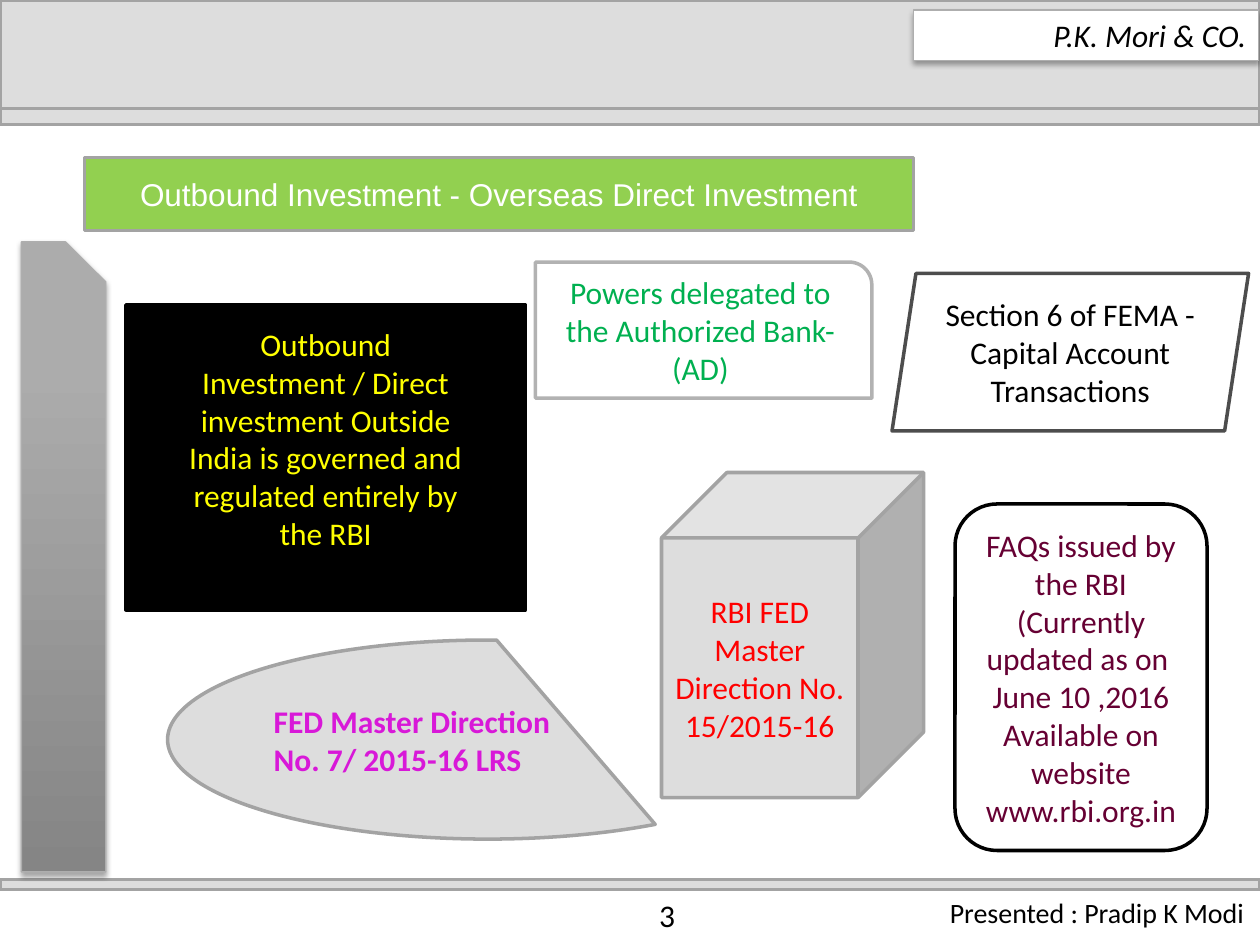
from lxml.etree import SubElement
from pptx import Presentation
from pptx.dml.color import RGBColor
from pptx.enum.shapes import MSO_SHAPE
from pptx.enum.text import MSO_ANCHOR, PP_ALIGN
from pptx.oxml import parse_xml
from pptx.oxml.ns import nsdecls, qn
from pptx.util import Inches, Pt

BLACK = RGBColor(0x00, 0x00, 0x00)
WHITE = RGBColor(0xFF, 0xFF, 0xFF)
PANEL = RGBColor(0xDD, 0xDD, 0xDD)
BORDER = RGBColor(0xA3, 0xA3, 0xA3)
SILVER = RGBColor(0xB2, 0xB2, 0xB2)
HAIRLINE = RGBColor(0xAE, 0xAE, 0xAE)
CHARCOAL = RGBColor(0x4D, 0x4D, 0x4D)
BAR_DARK = RGBColor(0x85, 0x85, 0x85)
BAR_LIGHT = RGBColor(0xAC, 0xAC, 0xAC)
LIME = RGBColor(0x92, 0xD0, 0x50)
GREEN = RGBColor(0x00, 0xB0, 0x50)
RED = RGBColor(0xFF, 0x00, 0x00)
YELLOW = RGBColor(0xFF, 0xFF, 0x00)
MAROON = RGBColor(0x66, 0x00, 0x33)
MAGENTA = RGBColor(0xD8, 0x18, 0xD8)
PURPLE = RGBColor(0x70, 0x30, 0xA0)


def paint(sp, fill, line, width=2):
    if fill is not None:
        sp.fill.solid()
        sp.fill.fore_color.rgb = fill
    sp.line.color.rgb = line
    sp.line.width = Pt(width)


def write(sp, text, color, size=18, font="Calibri", align=PP_ALIGN.CENTER,
          anchor=MSO_ANCHOR.MIDDLE, bold=False, italic=False, wrap=True):
    tf = sp.text_frame
    tf.word_wrap = wrap
    tf.vertical_anchor = anchor
    tf.text = text
    for p in tf.paragraphs:
        p.alignment = align
        for r in p.runs:
            r.font.name = font
            r.font.size = Pt(size)
            r.font.color.rgb = color
            r.font.bold = bold
            r.font.italic = italic


def add_box(slide, kind, box, fill, line, width=2, adj=()):
    sp = slide.shapes.add_shape(kind, *map(Inches, box))
    sp.shadow.inherit = False
    for i, value in enumerate(adj):
        sp.adjustments[i] = value
    paint(sp, fill, line, width)
    return sp


def add_label(slide, box, text, **style):
    sp = slide.shapes.add_textbox(*map(Inches, box))
    write(sp, text, BLACK, **style)


def add_shadow(sp):
    effects = sp._element.spPr.find(qn("a:effectLst"))
    effects.append(parse_xml(
        f'<a:outerShdw {nsdecls("a")} blurRad="{Pt(3.1)}" dist="{Pt(1.8)}" '
        'dir="5400000" rotWithShape="0"><a:srgbClr val="000000">'
        '<a:alpha val="35000"/></a:srgbClr></a:outerShdw>'))


def outline_text(sp, color, width):
    for p in sp.text_frame.paragraphs:
        for r in p.runs:
            rPr = r._r.get_or_add_rPr()
            ln = SubElement(rPr, qn("a:ln"), w=str(Pt(width)))
            fill = SubElement(ln, qn("a:solidFill"))
            SubElement(fill, qn("a:srgbClr"), val=str(color))
            rPr.insert(0, ln)  # the outline comes before the fill


def add_title(slide):
    title = slide.shapes.title
    title.left, title.top = Inches(0.67), Inches(1.25)
    title.width, title.height = Inches(6.58), Inches(0.58)
    paint(title, LIME, BORDER)
    write(title, "Outbound Investment - Overseas Direct Investment", WHITE,
          font="Arial")


def add_frame(slide):
    # Header and footer bands
    for top, height in ((0, 0.92), (0.86, 0.13), (6.98, 0.08)):
        add_box(slide, MSO_SHAPE.RECTANGLE, (0, top, 10, height), PANEL, BORDER)

    # Firm name tag
    tag = add_box(slide, MSO_SHAPE.RECTANGLE, (7.25, 0.08, 2.74, 0.4),
                  WHITE, HAIRLINE, 0.75)
    add_shadow(tag)
    write(tag, "P.K. Mori & CO.", BLACK, align=PP_ALIGN.RIGHT,
          anchor=MSO_ANCHOR.TOP, italic=True)

    # Footer texts
    add_label(slide, (4.13, 7.06, 2.33, 0.4), "3")
    add_label(slide, (7.44, 7.06, 2.57, 0.37), "Presented : Pradip K Modi",
              size=16, align=PP_ALIGN.LEFT, anchor=MSO_ANCHOR.TOP, wrap=False)

    # Side bar, dark at the foot
    bar = add_box(slide, MSO_SHAPE.SNIP_1_RECTANGLE, (0.17, 1.92, 0.67, 5),
                  None, HAIRLINE, 0.75, adj=(0.475,))
    bar.fill.gradient()
    bar.fill.gradient_angle = 90
    stops = zip(bar.fill.gradient_stops, ((0, BAR_DARK), (0.8, BAR_LIGHT)))
    for stop, (position, color) in stops:
        stop.position = position
        stop.color.rgb = color
    add_shadow(bar)


def add_topics(slide):
    powers = add_box(slide, MSO_SHAPE.ROUND_1_RECTANGLE,
                     (4.25, 2.08, 2.67, 1.08), WHITE, SILVER)
    write(powers, "Powers delegated to the Authorized Bank- (AD)", GREEN)

    section = add_box(slide, MSO_SHAPE.PARALLELOGRAM,
                      (7.08, 2.17, 2.83, 1.25), WHITE, CHARCOAL, adj=(0.152,))
    write(section, "Section 6 of FEMA - Capital Account Transactions", BLACK)
    outline_text(section, PURPLE, 0.75)

    direction = add_box(slide, MSO_SHAPE.CUBE, (5.25, 3.75, 2.08, 2.58),
                        PANEL, BORDER)
    write(direction, "RBI FED Master Direction No. 15/2015-16", RED)

    faqs = add_box(slide, MSO_SHAPE.FLOWCHART_ALTERNATE_PROCESS,
                   (7.58, 4, 2, 2.75), WHITE, BLACK)
    write(faqs, "FAQs issued by the RBI (Currently updated as on  June 10 ,2016 "
          "Available on website www.rbi.org.in", MAROON)

    remittance = add_box(slide, MSO_SHAPE.CHORD, (1.33, 5.08, 5.08, 1.58),
                         PANEL, BORDER, adj=(16.1, 165.09))
    write(remittance, "FED Master Direction\nNo. 7/ 2015-16 LRS", MAGENTA,
          align=PP_ALIGN.LEFT, bold=True)

    governed = add_box(slide, MSO_SHAPE.FLOWCHART_PREDEFINED_PROCESS,
                       (1, 2.42, 3.17, 2.42), BLACK, BLACK)
    write(governed, "Outbound Investment / Direct investment Outside India is "
          "governed and regulated entirely by the RBI", YELLOW)
    governed.text_frame.margin_bottom = Inches(0.35)


def main():
    prs = Presentation()
    prs.slide_width, prs.slide_height = Inches(10), Inches(7.5)
    slide = prs.slides.add_slide(prs.slide_layouts[5])
    add_title(slide)
    add_frame(slide)
    add_topics(slide)
    prs.save("out.pptx")


if __name__ == "__main__":
    main()
